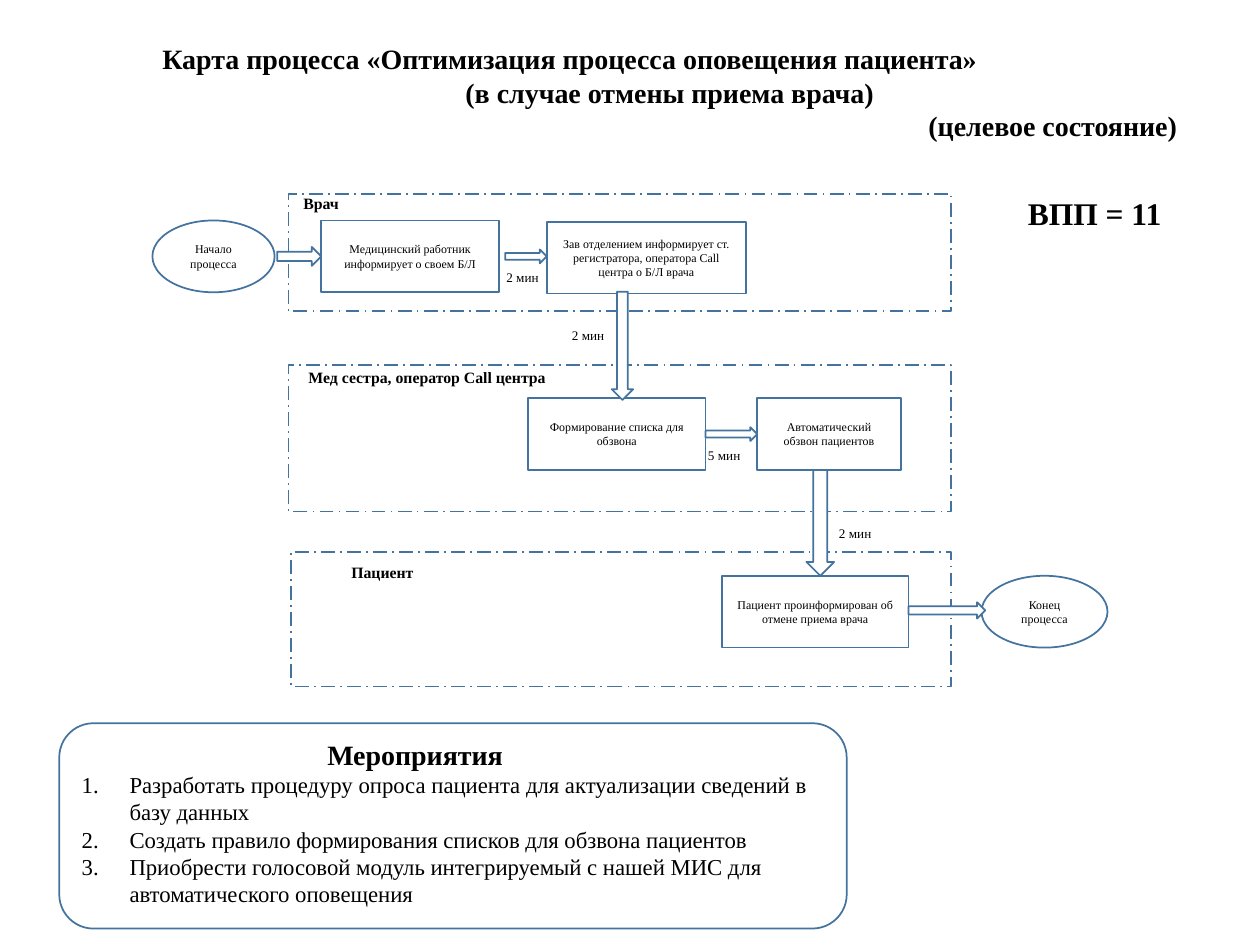
import pptx
import pptx.util
import pptx.dml.color
import pptx.enum.dml
import pptx.enum.shapes
import pptx.enum.text
import pptx.oxml.ns
from lxml import etree
from pptx.util import Inches

COLORS = {"paper": "FFFFFF", "outline": "43739E", "ink": "000000"}
FONT = "Times New Roman"
SHAPE = pptx.enum.shapes.MSO_SHAPE
ALIGN = pptx.enum.text.PP_ALIGN

presentation = pptx.Presentation()
presentation.slide_width = Inches(10)
presentation.slide_height = Inches(7.5)
slide = presentation.slides.add_slide(presentation.slide_layouts[6])


def write(frame, lines, size, bold=False, aligns=(ALIGN.LEFT,)):
    frame.word_wrap = True
    for index, line in enumerate(lines):
        paragraph = frame.paragraphs[0] if index == 0 else frame.add_paragraph()
        paragraph.alignment = aligns[index % len(aligns)]
        run = paragraph.add_run()
        run.text = line
        run.font.name = FONT
        run.font.size = pptx.util.Pt(size)
        run.font.bold = bold
        run.font.color.rgb = pptx.dml.color.RGBColor.from_string(COLORS["ink"])


def draw(kind, left, top, width, height):
    shape = slide.shapes.add_shape(
        kind, Inches(left), Inches(top), Inches(width), Inches(height))
    shape.shadow.inherit = False
    shape.fill.solid()
    shape.fill.fore_color.rgb = pptx.dml.color.RGBColor.from_string(COLORS["paper"])
    shape.line.color.rgb = pptx.dml.color.RGBColor.from_string(COLORS["outline"])
    shape.line.width = pptx.util.Pt(1)
    shape.text_frame.vertical_anchor = pptx.enum.text.MSO_ANCHOR.MIDDLE
    return shape


lanes = [(2.31, 4.38, 5.24, 1.07), (2.29, 2.9, 5.26, 1.16), (2.29, 1.54, 5.26, 0.93)]
for place in lanes:
    lane = draw(SHAPE.RECTANGLE, *place)
    lane.line.dash_style = pptx.enum.dml.MSO_LINE.LONG_DASH_DOT

step_height = 0.57
steps = [
    (SHAPE.RECTANGLE, 2.55, 1.75, 1.41, "Медицинский работник информирует о своем Б/Л"),
    (SHAPE.RECTANGLE, 4.34, 1.76, 1.58,
     "Зав отделением информирует ст. регистратора, оператора Call центра о Б/Л врача"),
    (SHAPE.RECTANGLE, 4.19, 3.16, 1.41, "Формирование списка для обзвона"),
    (SHAPE.RECTANGLE, 6.01, 3.16, 1.14, "Автоматический обзвон пациентов"),
    (SHAPE.RECTANGLE, 5.73, 4.57, 1.48, "Пациент проинформирован об отмене приема врача"),
    (SHAPE.OVAL, 1.21, 1.75, 0.97, "Начало процесса"),
    (SHAPE.OVAL, 7.79, 4.57, 1, "Конец процесса"),
]
for kind, left, top, width, wording in steps:
    step = draw(kind, left, top, width, step_height)
    write(step.text_frame, [wording], 6.8, aligns=(ALIGN.CENTER,))

arrows = [
    (2.2, 1.96, 0.35, 0.15, 0),
    (4.01, 1.98, 0.33, 0.11, 0),
    (4.51, 2.66, 0.86, 0.17, 90),
    (5.6, 3.39, 0.41, 0.11, 0),
    (6.09, 4.04, 0.84, 0.22, 90),
    (7.21, 4.78, 0.61, 0.13, 0),
]
for left, top, width, height, turn in arrows:
    arrow = draw(SHAPE.RIGHT_ARROW, left, top, width, height)
    arrow.rotation = turn

measures = draw(SHAPE.ROUNDED_RECTANGLE, 0.47, 5.74, 6.25, 1.63)
measures.text_frame.margin_top = Inches(0.26)
write(measures.text_frame, [
    "Разработать процедуру опроса пациента для актуализации сведений в базу данных",
    "Создать правило формирования списков для обзвона пациентов",
    "Приобрести голосовой модуль интегрируемый с нашей МИС для автоматического оповещения",
], 13)
for paragraph in measures.text_frame.paragraphs:
    properties = paragraph._p.get_or_add_pPr()
    properties.set("marL", str(Inches(0.38)))
    properties.set("indent", str(Inches(-0.38)))
    numbering = etree.SubElement(properties, pptx.oxml.ns.qn("a:buAutoNum"))
    numbering.set("type", "arabicPeriod")

heading = draw(SHAPE.RECTANGLE, 1.88, 5.78, 2.83, 0.41)
heading.line.fill.background()
write(heading.text_frame, ["Мероприятия"], 16, True, (ALIGN.CENTER,))

captions = [
    (3.92, 2.09, 0.58, 0.29, ["2 мин"], 7.5, False),
    (4.44, 2.55, 0.58, 0.29, ["2 мин"], 7.5, False),
    (5.52, 3.5, 0.58, 0.29, ["5 мин"], 7.5, False),
    (6.56, 4.12, 0.58, 0.29, ["2 мин"], 7.5, False),
    (2.31, 1.49, 0.65, 0.33, ["Врач"], 9, True),
    (2.35, 2.87, 2.5, 0.52, ["Мед сестра, оператор Call центра"], 9, True),
    (2.69, 4.42, 0.91, 0.33, ["Пациент"], 9, True),
    (8.06, 1.49, 1.3, 0.4, ["ВПП = 11"], 18, True),
    (1.19, 0.28, 8.25, 0.91, [
        "Карта процесса «Оптимизация процесса оповещения пациента»",
        "(в случае отмены приема врача)",
        "(целевое состояние)"], 16, True),
]
for left, top, width, height, lines, size, bold in captions:
    caption = slide.shapes.add_textbox(
        Inches(left), Inches(top), Inches(width), Inches(height))
    write(caption.text_frame, lines, size, bold, (ALIGN.LEFT, ALIGN.CENTER, ALIGN.RIGHT))

presentation.save("out.pptx")
